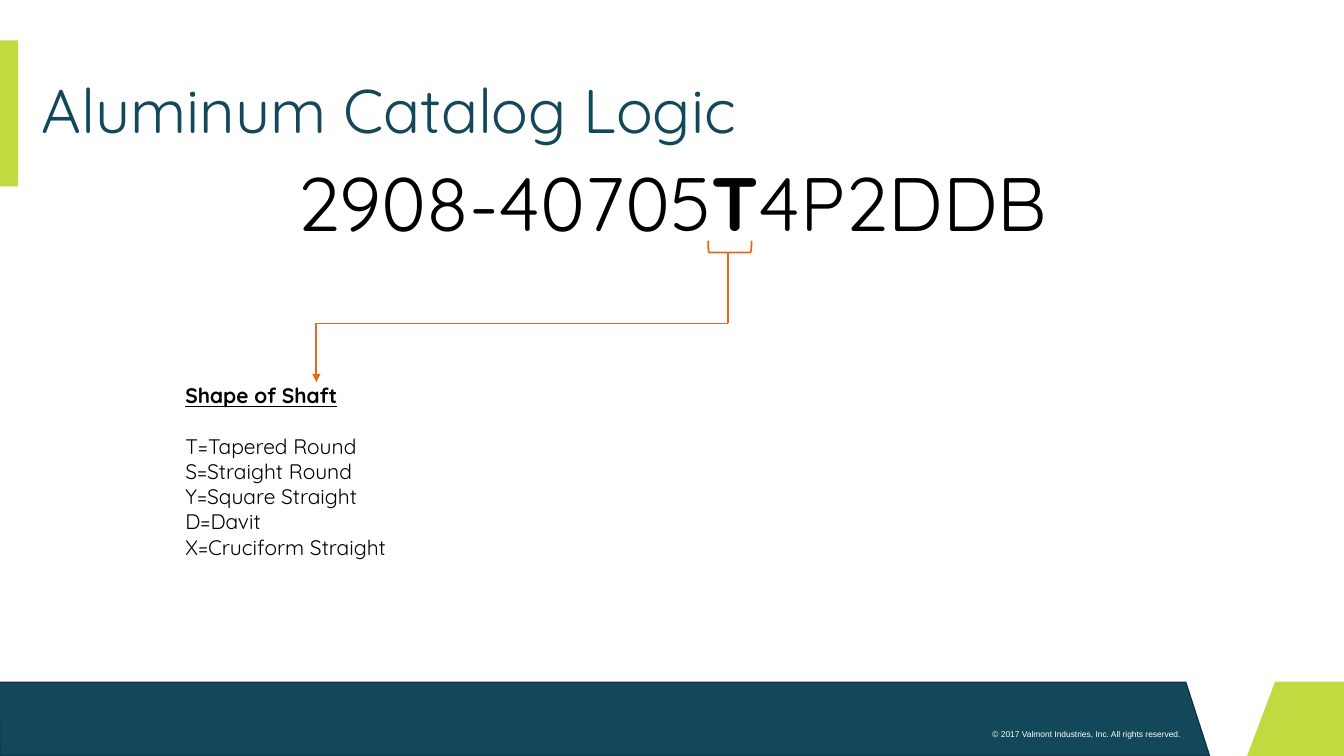
from lxml import etree
from pptx import Presentation
from pptx.dml.color import RGBColor
from pptx.enum.shapes import MSO_CONNECTOR, MSO_SHAPE
from pptx.enum.text import MSO_ANCHOR, MSO_AUTO_SIZE, PP_ALIGN
from pptx.oxml.ns import qn
from pptx.util import Pt

STRAIGHT = MSO_CONNECTOR.STRAIGHT
RECT, BRACKET = MSO_SHAPE.RECTANGLE, MSO_SHAPE.RIGHT_BRACKET
MIDDLE = MSO_ANCHOR.MIDDLE
GROW = MSO_AUTO_SIZE.SHAPE_TO_FIT_TEXT
LEFT, CENTER, RIGHT = PP_ALIGN.LEFT, PP_ALIGN.CENTER, PP_ALIGN.RIGHT

WIDE, HIGH = 960, 540
TEAL, EDGE, LIME, ORANGE = "13485B", "0E3543", "C3D940", "E6681A"
BLACK, WHITE = "000000", "FFFFFF"
FACE = "Quicksand"
SHAFTS = ["T=Tapered Round", "S=Straight Round", "Y=Square Straight",
          "D=Davit", "X=Cruciform Straight"]


def color(code):
    return RGBColor.from_string(code)


def paint(shape, fill=None, line=None, width=1):
    """Set fill and outline; None means no fill or no line."""
    shape.shadow.inherit = False
    if fill:
        shape.fill.solid()
        shape.fill.fore_color.rgb = color(fill)
    else:
        shape.fill.background()
    if line:
        shape.line.color.rgb = color(line)
        shape.line.width = Pt(width)
    else:
        shape.line.fill.background()


def add_shape(slide, kind, box, **look):
    shape = slide.shapes.add_shape(kind, *map(Pt, box))
    paint(shape, **look)
    return shape


def add_band(slide, points, **look):
    pen = slide.shapes.build_freeform(Pt(points[0][0]), Pt(points[0][1]))
    pen.add_line_segments([(Pt(x), Pt(y)) for x, y in points[1:]], close=True)
    paint(pen.convert_to_shape(), **look)


def add_line(slide, start, end, arrow=False):
    link = slide.shapes.add_connector(STRAIGHT, *map(Pt, start + end))
    link.line.color.rgb = color(ORANGE)
    link.line.width = Pt(1.25)
    if arrow:
        tail = etree.SubElement(link.line._get_or_add_ln(), qn("a:tailEnd"))
        tail.set("type", "triangle")
    etree.SubElement(link._element.spPr, qn("a:effectLst"))


def set_font(font, size, ink, face=FACE):
    font.size = Pt(size)
    font.name = face
    font.color.rgb = color(ink)


def add_text(slide, box, lines, size, ink=BLACK, face=FACE, align=LEFT, wrap=True):
    """Each line is a list of runs, given as (text, bold)."""
    frame = slide.shapes.add_textbox(*map(Pt, box)).text_frame
    frame.word_wrap = wrap
    frame.auto_size = GROW
    for i, runs in enumerate(lines):
        para = frame.add_paragraph() if i else frame.paragraphs[0]
        para.alignment = align
        set_font(para.font, size, ink, face)
        for text, bold in runs:
            run = para.add_run()
            run.text = text
            if bold:
                run.font.bold = True
    return frame


def add_title(slide, text):
    title = slide.shapes.title
    title.left, title.top, title.width, title.height = map(Pt, (22.3, 28.8, 938, 104.4))
    title.text_frame.text = text
    title.text_frame.vertical_anchor = MIDDLE
    para = title.text_frame.paragraphs[0]
    para.alignment = LEFT
    para.line_spacing = 0.9
    set_font(para.font, 44, TEAL)


def add_frame(slide):
    add_band(slide, [(0, HIGH), (-0.5, 487.3), (847, 487.3), (864, HIGH)],
             fill=TEAL, line=EDGE)
    add_band(slide, [(WIDE, 487), (910.8, 487), (890.8, HIGH), (WIDE, HIGH)], fill=LIME)
    add_shape(slide, RECT, (0, 28.8, 13, 104.4), fill=LIME)
    add_text(slide, (670.3, 517, 180, 14.4),
             [[("© 2017 Valmont Industries, Inc. All rights reserved.", False)]],
             6, WHITE, "Arial", RIGHT)


def add_pointer(slide):
    """Bracket under the shaft letter, with an arrow down to its legend."""
    bracket = add_shape(slide, BRACKET, (517, 160.6, 8.6, 31), line=ORANGE, width=1.25)
    bracket.rotation = 90
    stem, tip, level = 519.8, 226, 231
    add_line(slide, (tip, level), (tip, 273), arrow=True)
    add_line(slide, (stem, 180.7), (stem, level))
    add_line(slide, (tip, level), (stem, level))


def main():
    deck = Presentation()
    deck.slide_width, deck.slide_height = Pt(WIDE), Pt(HIGH)
    slide = deck.slides.add_slide(deck.slide_layouts[5])
    add_frame(slide)
    add_title(slide, "Aluminum Catalog Logic")
    add_pointer(slide)
    add_text(slide, (204.5, 108, 550.8, 72.7),
             [[("2908-40705", False), ("T", True), ("4P2DDB", False)]],
             54, align=CENTER, wrap=False)
    legend = add_text(slide, (125.3, 270, 678.2, 134.6),
                      [[("Shape of Shaft", True)]] + [[(name, False)] for name in SHAFTS], 15)
    head, first = legend.paragraphs[:2]
    head.runs[0].font.underline = True
    first.space_before = Pt(18)
    deck.save("out.pptx")


if __name__ == "__main__":
    main()
